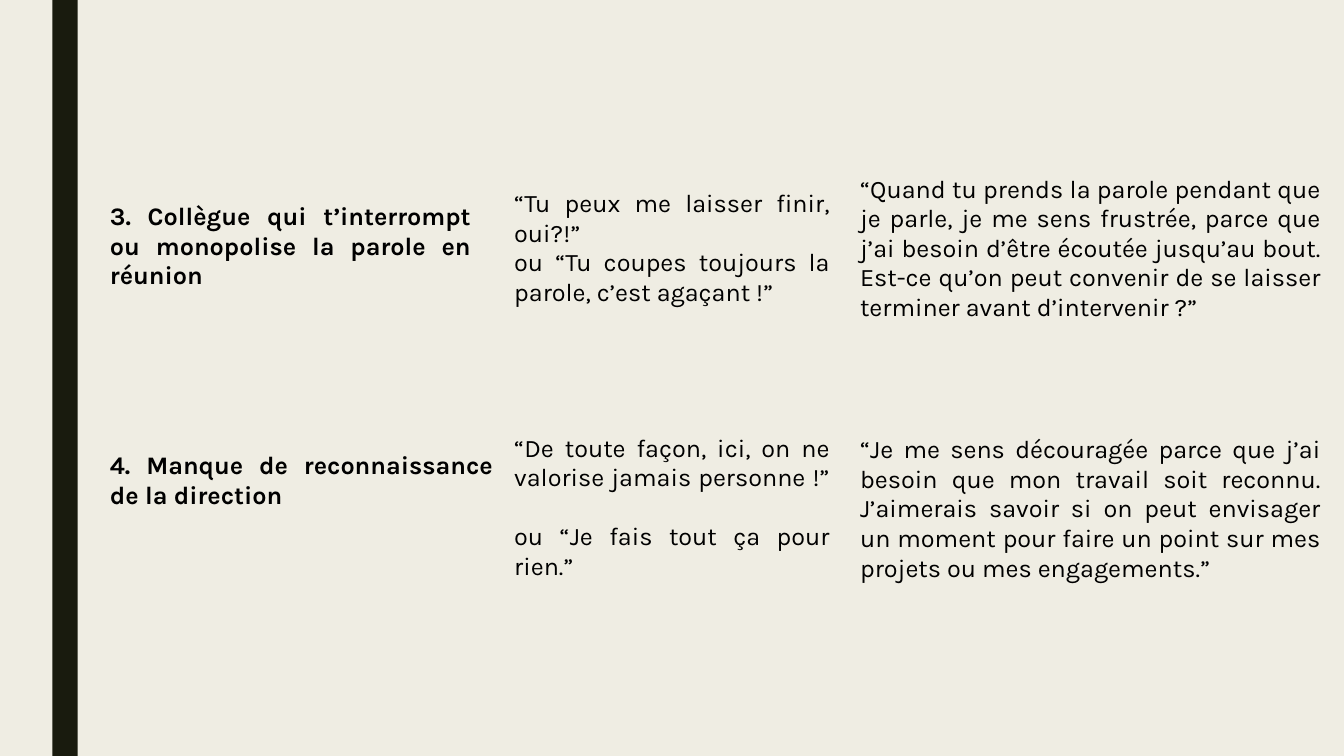
from pptx import Presentation
from pptx.dml.color import RGBColor
from pptx.enum.shapes import MSO_SHAPE
from pptx.enum.text import MSO_ANCHOR, PP_ALIGN
from pptx.util import Inches, Pt

BACKGROUND, BAR, TEXT = "EFEDE3", "191B0E", "000000"
NO_GRID_STYLE = "{2D5ABB26-0587-4C30-8999-92F81FD0307C}"
COLUMN_LEFTS = (0.99, 5, 8.43)

SITUATIONS = [
    [
        ("3. Collègue qui t’interrompt ou monopolise la parole en réunion", 1.81, 3.78, 1.28),
        ("“Tu peux me laisser finir, oui?!” \nou “Tu coupes toujours la parole, c’est agaçant !”",
         1.81, 3.33, 1.31),
        ("“Quand tu prends la parole pendant que je parle, je me sens frustrée, "
         "parce que j’ai besoin d’être écoutée jusqu’au bout. Est-ce qu’on peut "
         "convenir de se laisser terminer avant d’intervenir ?”", 1.67, 4.77, 1.6),
    ],
    [
        ("4. Manque de reconnaissance de la direction", 4.29, 4, 0.97),
        ("“De toute façon, ici, on ne valorise jamais personne !” \nou “Je fais tout ça pour rien.”",
         4.07, 3.33, 1.94),
        ("“Je me sens découragée parce que j’ai besoin que mon travail soit reconnu. "
         "J’aimerais savoir si on peut envisager un moment pour faire un point sur mes "
         "projets ou mes engagements.”", 4.07, 4.77, 1.97),
    ],
]


def paint(fill, color):
    fill.solid()
    fill.fore_color.rgb = RGBColor.from_string(color)


def add_text_table(page, text, left, top, width, height, bold):
    frame = page.shapes.add_table(1, 1, Inches(left), Inches(top), Inches(width), Inches(height))
    table = frame.table
    table.first_row = False
    table.horz_banding = False
    table._tbl.tblPr[0].text = NO_GRID_STYLE
    cell = table.cell(0, 0)
    cell.fill.background()
    cell.vertical_anchor = MSO_ANCHOR.MIDDLE
    para = cell.text_frame.paragraphs[0]
    para.text = text
    para.alignment = PP_ALIGN.JUSTIFY
    for font in [para.font] + [span.font for span in para.runs]:
        font.name = "Karla"
        font.size = Pt(18)
        font.bold = bold
        paint(font.fill, TEXT)


def main():
    deck = Presentation()
    deck.slide_width, deck.slide_height = Inches(13.33), Inches(7.5)
    page = deck.slides.add_slide(deck.slide_layouts[6])
    paint(page.background.fill, BACKGROUND)

    bar = page.shapes.add_shape(MSO_SHAPE.RECTANGLE, Inches(0.52), 0, Inches(0.25), deck.slide_height)
    bar.shadow.inherit = False
    paint(bar.fill, BAR)
    bar.line.fill.background()

    for situation in SITUATIONS:
        for column, (text, top, width, height) in enumerate(situation):
            add_text_table(page, text, COLUMN_LEFTS[column], top, width, height, column == 0)
    deck.save("out.pptx")


if __name__ == "__main__":
    main()
